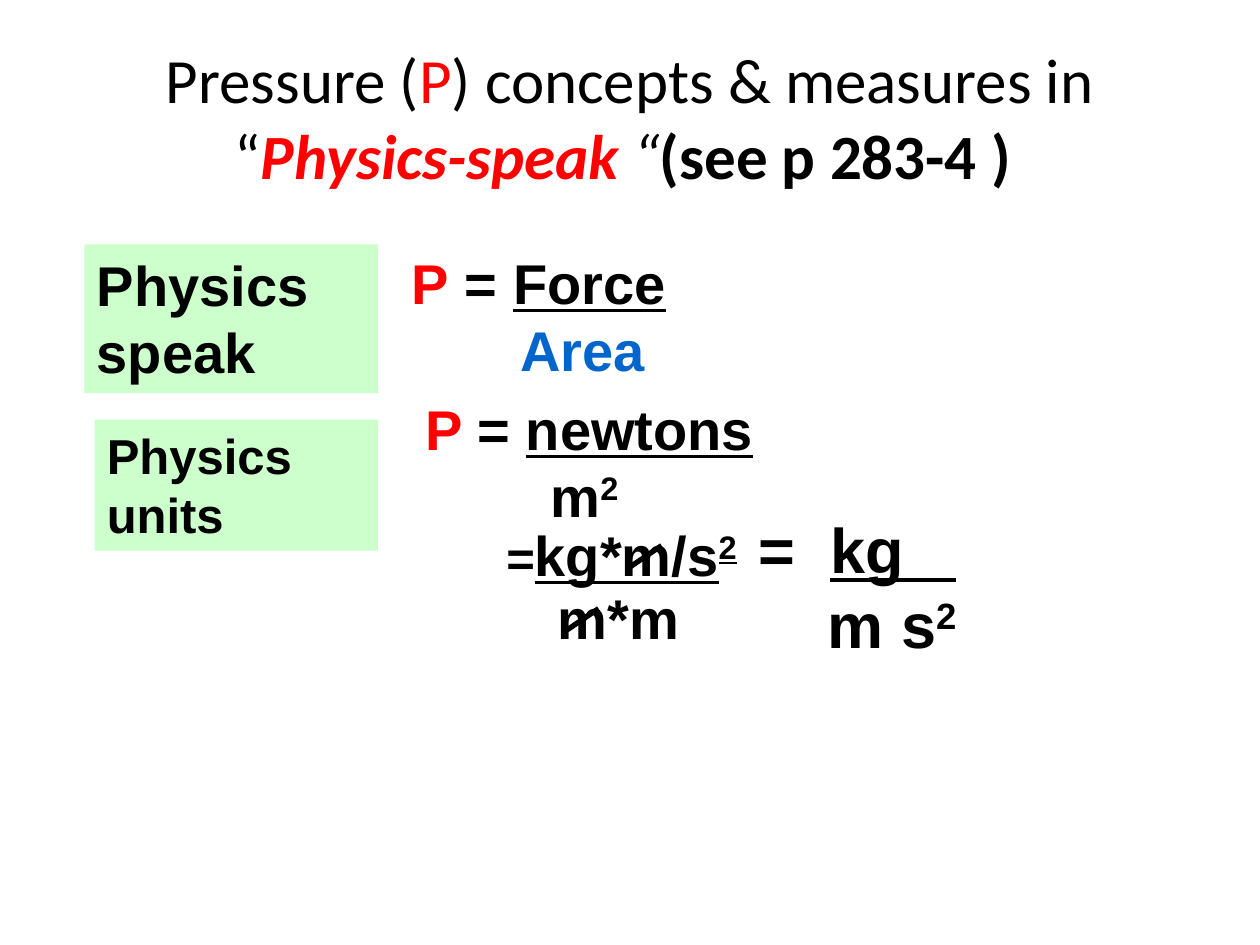
from lxml import etree
from pptx import Presentation
from pptx.dml.color import RGBColor
from pptx.enum.shapes import MSO_CONNECTOR as Connector, MSO_SHAPE as Shape
from pptx.enum.text import MSO_ANCHOR as Anchor, PP_ALIGN as Align
from pptx.oxml.ns import qn
from pptx.util import Inches, Pt

BLACK, RED, BLUE, GREEN = "000000", "FF0000", "0066CC", "CCFFCC"
RED_TEXT = {"color": RED}
UNDERLINED = {"underline": True}
RAISED = {"raised": True}


def color(value):
    return RGBColor.from_string(value)


def add_run(paragraph, text, **style):
    run = paragraph.add_run()
    run.text = text
    run.font.color.rgb = color(style.pop("color", BLACK))
    if style.pop("raised", False):
        run._r.get_or_add_rPr().set("baseline", "30000")
    style["size"] = Pt(style["size"])
    for name, value in style.items():
        setattr(run.font, name, value)


def fill_text(shape, lines, indent=0, align=Align.LEFT, anchor=Anchor.TOP, **base):
    """Write lines of (text, style) runs; lines after the first are indented."""
    frame = shape.text_frame
    frame.word_wrap = True
    frame.vertical_anchor = anchor
    for index, runs in enumerate(lines):
        paragraph = frame.add_paragraph() if index else frame.paragraphs[0]
        paragraph.alignment = align
        if index and indent:
            paragraph._p.get_or_add_pPr().set("marL", str(Inches(indent)))
        for text, style in runs:
            add_run(paragraph, text, **{**base, **style})


def add_text(slide, box, lines, **format_values):
    shape = slide.shapes.add_textbox(*map(Inches, box))
    fill_text(shape, lines, **{"name": "Arial", "bold": True, **format_values})


def add_title(slide, box):
    emphasis = {"color": RED, "bold": True, "italic": True}
    runs = [("Pressure (", {}), ("P", RED_TEXT), (") concepts & measures in “", {}),
            ("Physics-speak ", emphasis), ("“", {"italic": True}),
            ("(see p 283-4 ) ", {"bold": True})]
    add_text(slide, box, [runs], name="Calibri", size=36, bold=False,
             align=Align.CENTER, anchor=Anchor.MIDDLE)


def add_label(slide, box, text, size):
    label = slide.shapes.add_shape(Shape.RECTANGLE, *map(Inches, box))
    label.shadow.inherit = False
    label.fill.solid()
    label.fill.fore_color.rgb = color(GREEN)
    label.line.fill.background()
    fill_text(label, [[(text, {})]], name="Arial", size=size, bold=True)


def add_strike(slide, left, top, width=0.25, height=0.17):
    """Cancel a unit with a rising stroke."""
    ends = (left + width, top, left, top + height)
    stroke = slide.shapes.add_connector(Connector.STRAIGHT, *map(Inches, ends))
    stroke.line.color.rgb = color(BLACK)
    stroke.line.width = Pt(3)
    etree.SubElement(stroke._element.spPr, qn("a:effectLst"))


def add_definition(slide, box):
    lines = [[("P", RED_TEXT), (" = ", {}), ("Force", UNDERLINED)],
             [("Area", {"color": BLUE})]]
    add_text(slide, box, lines, size=32, indent=0.86)


def add_units(slide, box):
    lines = [[("P ", RED_TEXT), ("= ", {}), ("newtons", UNDERLINED)],
             [("m", {}), ("2", RAISED)]]
    add_text(slide, box, lines, size=32, indent=0.99)


def add_cancelled_fraction(slide, left, top):
    numerator = [("=", {"size": 28}), ("kg*m/s", UNDERLINED),
                 ("2", {**UNDERLINED, **RAISED})]
    add_text(slide, (left, top, 2.17, 0.64), [numerator], size=32)
    add_text(slide, (left + 0.41, top + 0.5, 1.58, 0.64), [[("m*m", {})]], size=32)
    add_strike(slide, left + 1.08, top + 0.25)
    add_strike(slide, left + 0.58, top + 0.75)


def add_result(slide, box):
    lines = [[("=  ", {}), ("kg   ", UNDERLINED)],
             [("m s", {}), ("2", RAISED)]]
    add_text(slide, box, lines, size=36, indent=0.55)


def main():
    presentation = Presentation()
    presentation.slide_width, presentation.slide_height = Inches(10), Inches(7.5)
    slide = presentation.slides.add_slide(presentation.slide_layouts[6])
    add_title(slide, (0.5, 0.3, 9, 1.25))
    add_definition(slide, (3.17, 1.92, 3.25, 1.18))
    add_label(slide, (0.67, 1.94, 2.33, 1.18), "Physics speak", 32)
    add_label(slide, (0.75, 3.33, 2.25, 1.04), "Physics units", 28)
    add_units(slide, (3.28, 3.08, 3.81, 1.18))
    add_cancelled_fraction(slide, 3.92, 4.08)
    add_result(slide, (5.92, 4, 2.33, 1.31))
    presentation.save("out.pptx")


if __name__ == "__main__":
    main()
